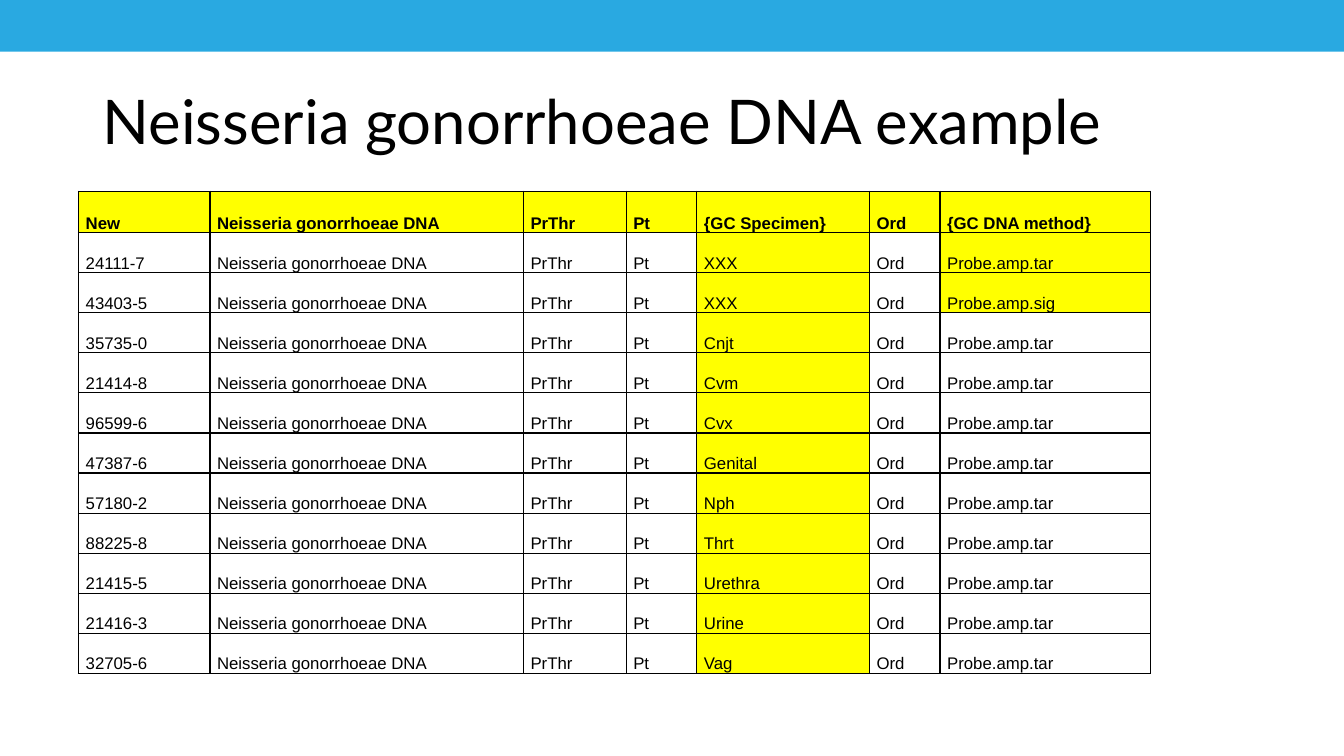
from lxml import etree
from pptx import Presentation
from pptx import util as u
from pptx.dml.color import RGBColor
from pptx.enum import shapes, text
from pptx.oxml.ns import qn

HUES = {"band": "29A9E1", "mark": "FFFF00", "ink": "000000"}
HEAD = ["New", "Neisseria gonorrhoeae DNA", "PrThr", "Pt",
        "{GC Specimen}", "Ord", "{GC DNA method}"]
TESTS = [
    ("24111-7", "XXX", "Probe.amp.tar"),
    ("43403-5", "XXX", "Probe.amp.sig"),
    ("35735-0", "Cnjt", "Probe.amp.tar"),
    ("21414-8", "Cvm", "Probe.amp.tar"),
    ("96599-6", "Cvx", "Probe.amp.tar"),
    ("47387-6", "Genital", "Probe.amp.tar"),
    ("57180-2", "Nph", "Probe.amp.tar"),
    ("88225-8", "Thrt", "Probe.amp.tar"),
    ("21415-5", "Urethra", "Probe.amp.tar"),
    ("21416-3", "Urine", "Probe.amp.tar"),
    ("32705-6", "Vag", "Probe.amp.tar"),
]
WIDTHS = [3.31, 7.9, 2.59, 1.78, 4.35, 1.78, 5.3]
SPEC, METHOD = 4, 6


def marked(row, col):
    """Tell whether a cell is yellow: header, specimens, methods of XXX rows."""
    return row == 0 or col == SPEC or (col == METHOD and row <= 2)


class Deck:
    """Holds the style and the current slide."""

    def __init__(self, wide, high):
        self.show = Presentation()
        self.show.slide_width, self.show.slide_height = u.Cm(wide), u.Cm(high)
        self.slide = self.show.slides.add_slide(self.show.slide_layouts[5])

    def hue(self, name):
        return RGBColor.from_string(HUES[name])

    def style(self, para, face, size, bold=False):
        font = para.font
        font.name, font.size, font.bold = face, u.Pt(size), bold
        font.color.rgb = self.hue("ink")
        para.alignment = text.PP_ALIGN.LEFT

    def band(self, *box):
        bar = self.slide.shapes.add_shape(
            shapes.MSO_SHAPE.RECTANGLE, *map(u.Cm, box))
        bar.shadow.inherit = False
        bar.fill.solid()
        bar.fill.fore_color.rgb = self.hue("band")
        bar.line.fill.background()

    def title(self, words, left, top, wide, high):
        head = self.slide.shapes.title
        head.left, head.top = u.Cm(left), u.Cm(top)
        head.width, head.height = u.Cm(wide), u.Cm(high)
        frame = head.text_frame
        frame.text = words
        frame.auto_size = text.MSO_AUTO_SIZE.NONE
        frame.vertical_anchor = text.MSO_ANCHOR.MIDDLE
        para = frame.paragraphs[0]
        para.line_spacing = 0.9
        self.style(para, "Lato", 44)

    def edge(self, cell):
        """Draw a thin line on all four sides of a cell."""
        props = cell._tc.get_or_add_tcPr()
        for side in ("lnL", "lnR", "lnT", "lnB"):
            line = etree.SubElement(props, qn("a:" + side), w=str(u.Pt(1)))
            fill = etree.SubElement(line, qn("a:solidFill"))
            etree.SubElement(fill, qn("a:srgbClr"), val=HUES["ink"])

    def cell(self, cell, words, mark, bold):
        cell.text = words
        cell.vertical_anchor = text.MSO_ANCHOR.BOTTOM
        cell.margin_left = cell.margin_right = u.Cm(0.18)
        cell.margin_top = cell.margin_bottom = 0
        self.style(cell.text_frame.paragraphs[0], "Arial", 12, bold)
        self.edge(cell)
        if mark:
            cell.fill.solid()
            cell.fill.fore_color.rgb = self.hue("mark")
        else:
            cell.fill.background()

    def table(self, rows, left, top, widths, first, step):
        """Lay out rows; the header is first high and each other row step."""
        high = first + step * (len(rows) - 1)
        grid = self.slide.shapes.add_table(
            len(rows), len(widths), u.Cm(left), u.Cm(top),
            u.Cm(sum(widths)), u.Cm(high)).table
        grid.horz_banding = False
        for col, wide in zip(grid.columns, widths):
            col.width = u.Cm(wide)
        for r, row in enumerate(rows):
            grid.rows[r].height = u.Cm(step if r else first)
            for c, words in enumerate(row):
                self.cell(grid.cell(r, c), words, marked(r, c), r == 0)


def main():
    deck = Deck(33.87, 19.05)
    deck.band(0, 0, 33.87, 1.3)
    deck.title("Neisseria gonorrhoeae DNA example", 2.33, 1.58, 29.21, 3.12)
    rows = [HEAD] + [[code, *HEAD[1:4], spec, HEAD[5], method]
                     for code, spec, method in TESTS]
    deck.table(rows, 1.98, 4.82, WIDTHS, 1.04, 1.01)
    deck.show.save("out.pptx")


if __name__ == "__main__":
    main()
